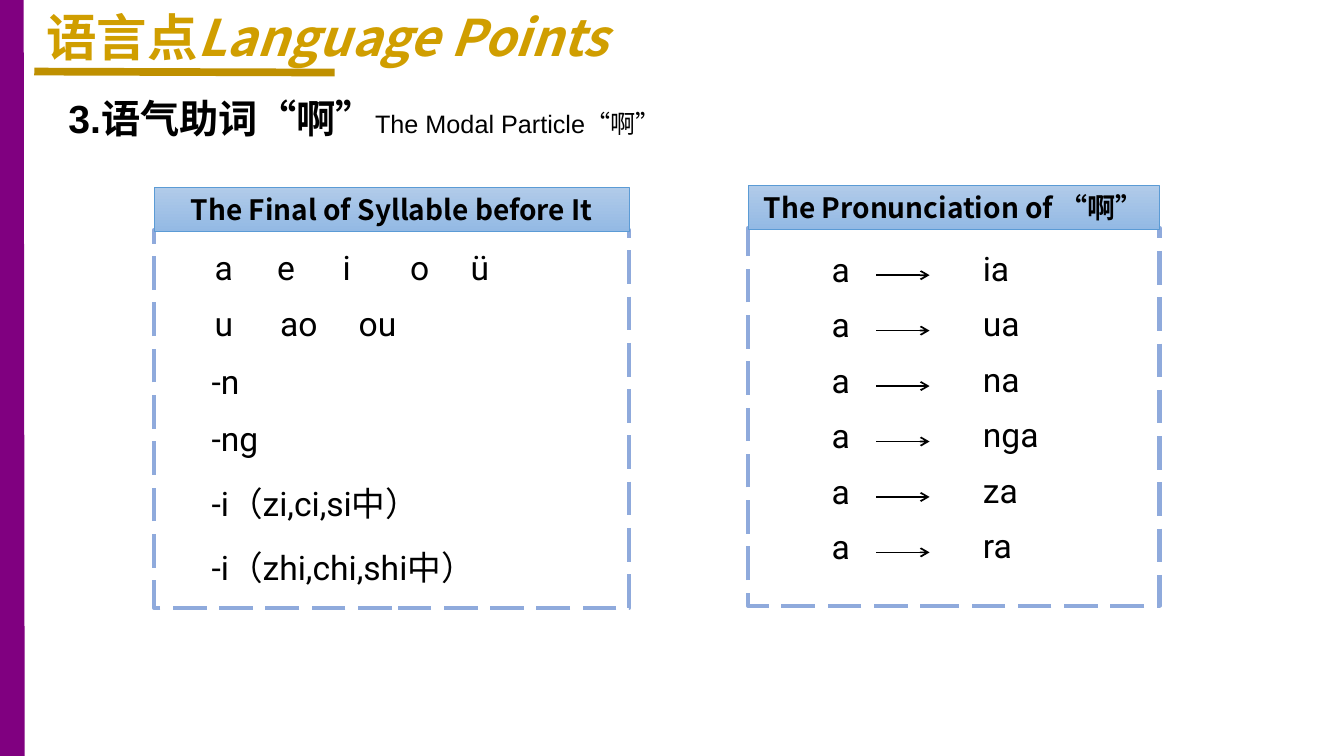
"""Build the language-points slide on the modal particle 啊."""
from dataclasses import dataclass

from pptx import Presentation
from pptx.dml.color import RGBColor
from pptx.enum import dml, lang, shapes, text
from pptx.oxml import ns
from pptx.util import Inches, Pt
from lxml import etree

TITLE = ("语言点", "Language Points")
HEADING = ("3.语气助词", "“啊”", "The Modal Particle", "“啊”")
PANELS = [
    ("The Final of Syllable before It", 1.53, 1.86, 4.71),
    ("The Pronunciation of “啊”", 7.42, 1.84, 4.08),
]
FINALS = [
    (2.4, [("a", 2.03), ("e", 2.65), ("i", 3.3), ("o", 3.97), ("ü", 4.57)]),
    (2.96, [("u", 2.03), ("ao", 2.68), ("ou", 3.46)]),
    (3.53, [("-n", 2)]),
    (4.1, [("-nɡ", 2)]),
    (4.74, [("-i（zi,ci,si中）", 2)]),
    (5.38, [("-i（zhi,chi,shi中）", 2)]),
]
PRONUNCIATIONS = ["ia", "ua", "na", "nga", "za", "ra"]
FIRST_ROW, ROW_PITCH = 2.42, 0.55
PARTICLE_LEFT, ARROW_LEFT, RESULT_LEFT = 8.15, 8.69, 9.65
ARROW_LENGTH, ARROW_DROP = 0.53, 0.31
HEADER_HEIGHT, FRAME_DROP, FRAME_HEIGHT = 0.44, 0.42, 3.75
TEXT_HEIGHT = 0.51


@dataclass(frozen=True)
class Theme:
    black: str = "000000"
    purple: str = "800080"
    gold: str = "D09E00"
    rule: str = "BF9000"
    frame: str = "8FAADC"
    header_line: str = "5B9BD5"
    header_fill: tuple = ("B1CBE9", "93B9E4")
    heading_font: str = "Arial"
    cjk_font: str = "Noto Sans CJK SC"
    body_font: str = "Roboto"
    title_size: int = 36
    heading_size: int = 28
    body_size: int = 24
    header_size: int = 20
    gloss_size: int = 18


THEME = Theme()


def box(*lengths):
    return [Inches(length) for length in lengths]


def format_run(run, size, name, color=THEME.black, bold=False, italic=False):
    font = run.font
    font.size, font.name, font.bold, font.italic = Pt(size), name, bold, italic
    font.color.rgb = RGBColor.from_string(color)
    font.language_id = lang.MSO_LANGUAGE_ID.SIMPLIFIED_CHINESE
    east_asian = etree.Element(ns.qn("a:ea"), typeface=THEME.cjk_font)
    run._r.rPr.find(ns.qn("a:latin")).addnext(east_asian)


def add_runs(paragraph, pieces):
    for words, style in pieces:
        run = paragraph.add_run()
        run.text = words
        format_run(run, **style)


def set_line(line, color, width):
    line.color.rgb = RGBColor.from_string(color)
    line.width = Pt(width)


def add_line(slide, start, end, color, width, arrow=False):
    connector = slide.shapes.add_connector(
        shapes.MSO_CONNECTOR.STRAIGHT, *box(*start, *end))
    set_line(connector.line, color, width)
    properties = connector.element.spPr
    if arrow:
        etree.SubElement(properties.find(ns.qn("a:ln")), ns.qn("a:tailEnd"), type="arrow")
    etree.SubElement(properties, ns.qn("a:effectLst"))


def add_text(slide, left, top, width, pieces, height=TEXT_HEIGHT):
    shape = slide.shapes.add_textbox(*box(left, top, width, height))
    shape.text_frame.word_wrap = True
    add_runs(shape.text_frame.paragraphs[0], pieces)


def add_syllable(slide, words, left, top):
    style = dict(size=THEME.body_size, name=THEME.body_font)
    add_text(slide, left, top, 0.4 + 0.2 * len(words), [(words, style)])


def add_title(slide):
    title = slide.shapes.title
    title.left, title.top, title.width, title.height = box(0.36, 0.01, 5.93, 0.71)
    frame = title.text_frame
    frame.word_wrap = False
    frame.auto_size = text.MSO_AUTO_SIZE.NONE
    frame.vertical_anchor = text.MSO_ANCHOR.TOP
    paragraph = frame.paragraphs[0]
    paragraph.alignment = text.PP_ALIGN.LEFT
    style = dict(size=THEME.title_size, name=THEME.cjk_font, color=THEME.gold, bold=True)
    add_runs(paragraph, [(TITLE[0], style), (TITLE[1], style | {"italic": True})])
    slide.shapes.element.append(title.element)


def add_heading(slide):
    styles = [
        dict(size=size, name=name, bold=bold)
        for size, bold in ((THEME.heading_size, True), (THEME.gloss_size, False))
        for name in (THEME.heading_font, THEME.cjk_font)
    ]
    add_text(slide, 0.58, 0.89, 9.09, zip(HEADING, styles), 0.57)


def add_panel(slide, label, left, top, width):
    group = slide.shapes.add_group_shape()
    frame, header = (
        group.shapes.add_shape(shapes.MSO_SHAPE.RECTANGLE, *box(left, y, width, height))
        for y, height in ((top + FRAME_DROP, FRAME_HEIGHT), (top, HEADER_HEIGHT))
    )
    for shape in (frame, header):
        shape.shadow.inherit = False
    frame.fill.background()
    set_line(frame.line, THEME.frame, 3)
    frame.line.dash_style = dml.MSO_LINE.LONG_DASH
    header.fill.gradient()
    header.fill.gradient_angle = 270
    for stop, color in zip(header.fill.gradient_stops, THEME.header_fill):
        stop.color.rgb = RGBColor.from_string(color)
    set_line(header.line, THEME.header_line, 0.5)
    paragraph = header.text_frame.paragraphs[0]
    paragraph.alignment = text.PP_ALIGN.CENTER
    style = dict(size=THEME.header_size, name=THEME.cjk_font, bold=True)
    add_runs(paragraph, [(label, style)])


def main():
    presentation = Presentation()
    presentation.slide_width, presentation.slide_height = box(13.33, 7.5)
    slide = presentation.slides.add_slide(presentation.slide_layouts[5])
    add_line(slide, (0.12, 7.5), (0.11, -0.02), THEME.purple, 18)
    add_line(slide, (0.34, 0.71), (3.32, 0.72), THEME.rule, 5.5)
    add_title(slide)
    add_heading(slide)
    for panel in PANELS:
        add_panel(slide, *panel)
    for top, finals in FINALS:
        for words, left in finals:
            add_syllable(slide, words, left, top)
    for row, result in enumerate(PRONUNCIATIONS):
        top = FIRST_ROW + row * ROW_PITCH
        arrow_top = top + ARROW_DROP
        add_syllable(slide, "a", PARTICLE_LEFT, top)
        add_line(slide, (ARROW_LEFT, arrow_top), (ARROW_LEFT + ARROW_LENGTH, arrow_top),
                 THEME.black, 1.25, arrow=True)
        add_syllable(slide, result, RESULT_LEFT, top - 0.01)
    presentation.save("out.pptx")


if __name__ == "__main__":
    main()
